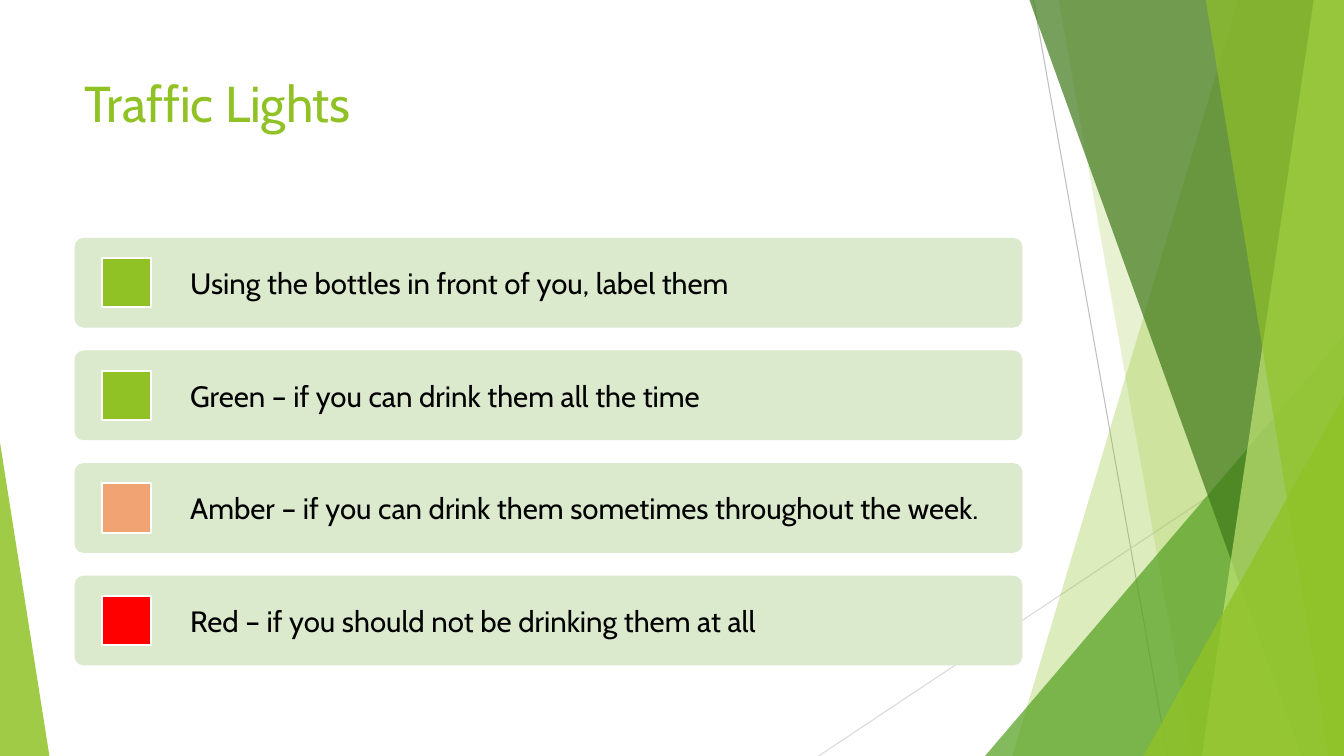
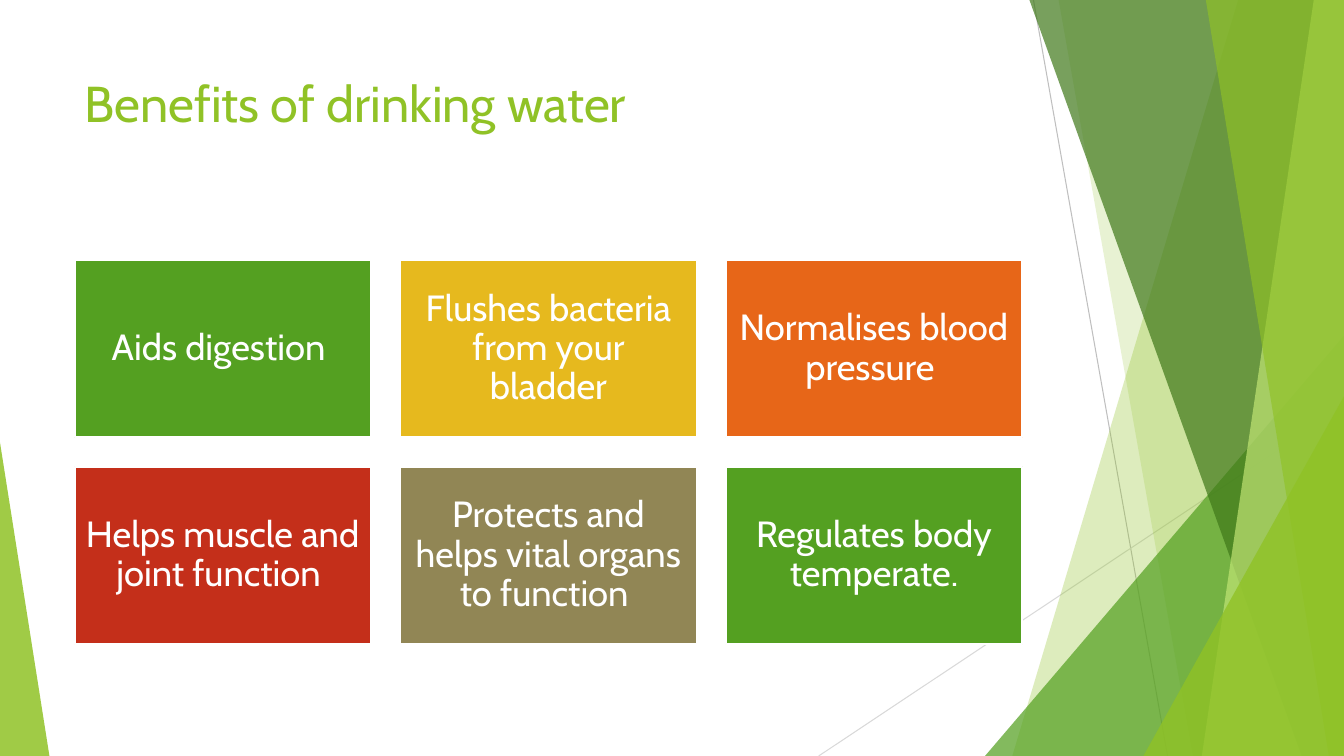
from pptx import Presentation
from pptx.dml.color import RGBColor
from pptx.enum.shapes import MSO_CONNECTOR, MSO_SHAPE as Shape
from pptx.enum.text import MSO_ANCHOR as Anchor, PP_ALIGN as Align
from pptx.oxml.ns import qn
from pptx.oxml.xmlchemy import OxmlElement
from pptx.util import Inches, Pt

WIDTH, HEIGHT = 13.33, 7.5
LEFT, CONTENT_WIDTH = 0.74, 9.4
FONT = "Cabin"
COLORS = {
    "lime": "90C226", "green": "54A021", "forest": "3F7819", "pale": "C0E474",
    "mint": "DBE9CD", "amber": "F1A374", "red": "FF0000", "gold": "E6B91E",
    "orange": "E76618", "brick": "C42F1A", "olive": "918655",
    "grey": "BFBFBF", "silver": "D9D9D9", "white": "FFFFFF", "black": "000000",
}

# Backdrop, from back to front
RAYS = [
    ((10.25, 0), (11.58, HEIGHT), "grey"),
    ((WIDTH, 4.03), (8.12, HEIGHT), "silver"),
]
# Bands: left edge at the top, left edge at the bottom, colour, opacity
# Triangles: box, apex position, colour, opacity
BACKDROP = [
    ("band", (12.28, 10.04), "lime", 30),
    ("band", (10.5, 11.83), "lime", 20),
    ("triangle", ((9.77, 3.33, 3.56, 4.17), 1), "green", 72),
    ("band", (10.21, 12.91), "forest", 70),
    ("band", (13.03, 11.92), "pale", 70),
    ("band", (11.96, 13.18), "lime", 65),
    ("triangle", ((11.34, 3.93, 1.99, 3.57), 1), "lime", 80),
    ("triangle", ((0, 4.39, 0.49, 3.11), 0), "lime", 85),
]

LIGHTS_TITLE = "Traffic Lights"
LIGHTS = [
    ("Using the bottles in front of you, label them", "lime"),
    ("Green – if you can drink them all the time", "lime"),
    ("Amber – if you can drink them sometimes throughout the week.", "amber"),
    ("Red – if you should not be drinking them at all", "red"),
]
BENEFITS_TITLE = "Benefits of drinking water"
BENEFITS = [
    ("Aids digestion ", "green"),
    ("Flushes bacteria from your bladder", "gold"),
    ("Normalises blood pressure ", "orange"),
    ("Helps muscle and joint function ", "brick"),
    ("Protects and helps vital organs to function ", "olive"),
    ("Regulates body temperate.", "green"),
]


def rgb(name):
    return RGBColor.from_string(COLORS[name])


def paint(shape, color, opacity=100, outline=None):
    shape.shadow.inherit = False
    shape.fill.solid()
    shape.fill.fore_color.rgb = rgb(color)
    if opacity < 100:
        alpha = OxmlElement("a:alpha")
        alpha.set("val", str(opacity * 1000))
        shape.element.spPr.find(qn("a:solidFill"))[0].append(alpha)
    if outline:
        shape.line.color.rgb = rgb(outline)
        shape.line.width = Pt(1.5)
    else:
        shape.line.fill.background()


def add_box(slide, kind, box, color, adjust=None, **style):
    shape = slide.shapes.add_shape(kind, *map(Inches, box))
    if adjust is not None:
        shape.adjustments[0] = adjust
    paint(shape, color, **style)
    return shape


def write(shape, text, size, color, align=Align.LEFT, spacing=1.0, **frame_format):
    frame = shape.text_frame
    frame.word_wrap = True
    for name, value in frame_format.items():
        setattr(frame, name, value)
    paragraph = frame.paragraphs[0]
    paragraph.alignment = align
    paragraph.line_spacing = spacing
    run = paragraph.add_run()
    run.text = text
    run.font.name, run.font.size = FONT, Pt(size)
    run.font.color.rgb = rgb(color)


def margins(width, **changes):
    sides = dict.fromkeys(("left", "top", "right", "bottom"), width) | changes
    return {f"margin_{side}": Inches(value) for side, value in sides.items()}


def add_ray(slide, start, end, color):
    ray = slide.shapes.add_connector(
        MSO_CONNECTOR.STRAIGHT, *map(Inches, (*start, *end)))
    ray.line.color.rgb = rgb(color)
    ray.line.width = Pt(0.75)
    ray.element.spPr.append(OxmlElement("a:effectLst"))


def add_band(slide, top_x, bottom_x, color, opacity):
    """Draw a band from a slanted left edge to the slide's right edge."""
    corners = [(top_x, 0), (WIDTH, 0), (WIDTH, HEIGHT), (bottom_x, HEIGHT)]
    points = [(Inches(x), Inches(y)) for x, y in corners]
    outline = slide.shapes.build_freeform(*points[0])
    outline.add_line_segments(points[1:], close=True)
    paint(outline.convert_to_shape(), color, opacity)


def add_themed_slide(deck, title):
    slide = deck.slides.add_slide(deck.slide_layouts[6])
    for ray in RAYS:
        add_ray(slide, *ray)
    for kind, geometry, color, opacity in BACKDROP:
        if kind == "band":
            add_band(slide, *geometry, color, opacity)
        else:
            box, apex = geometry
            add_box(slide, Shape.ISOSCELES_TRIANGLE, box, color, apex, opacity=opacity)
    heading = slide.shapes.add_textbox(
        *map(Inches, (LEFT, 0.67, CONTENT_WIDTH, 1.44)))
    write(heading, title, 36, "lime", vertical_anchor=Anchor.TOP)
    return slide


def add_lights(slide):
    top, pitch, height, swatch = 2.36, 1.117, 0.89, 0.49
    for row, (text, color) in enumerate(LIGHTS):
        y = top + row * pitch
        bar = add_box(slide, Shape.ROUNDED_RECTANGLE,
                      (LEFT, y, CONTENT_WIDTH, height), "mint", 0.1)
        write(bar, text, 21, "black", vertical_anchor=Anchor.MIDDLE,
              **margins(0.09, left=1.12))
        add_box(slide, Shape.RECTANGLE,
                (LEFT + 0.27, y + (height - swatch) / 2, swatch, swatch),
                color, outline="white")


def add_benefits(slide):
    columns, top, width, height, gap = 3, 2.58, 2.94, 1.76, 0.29
    for index, (text, color) in enumerate(BENEFITS):
        row, column = divmod(index, columns)
        box = (LEFT + column * (width + gap), top + row * (height + gap), width, height)
        tile = add_box(slide, Shape.RECTANGLE, box, color, outline="white")
        write(tile, text, 26, "white", Align.CENTER, 0.9,
              vertical_anchor=Anchor.MIDDLE, **margins(0.11))


def main():
    deck = Presentation()
    deck.slide_width, deck.slide_height = Inches(WIDTH), Inches(HEIGHT)
    add_lights(add_themed_slide(deck, LIGHTS_TITLE))
    add_benefits(add_themed_slide(deck, BENEFITS_TITLE))
    deck.save("out.pptx")


if __name__ == "__main__":
    main()
